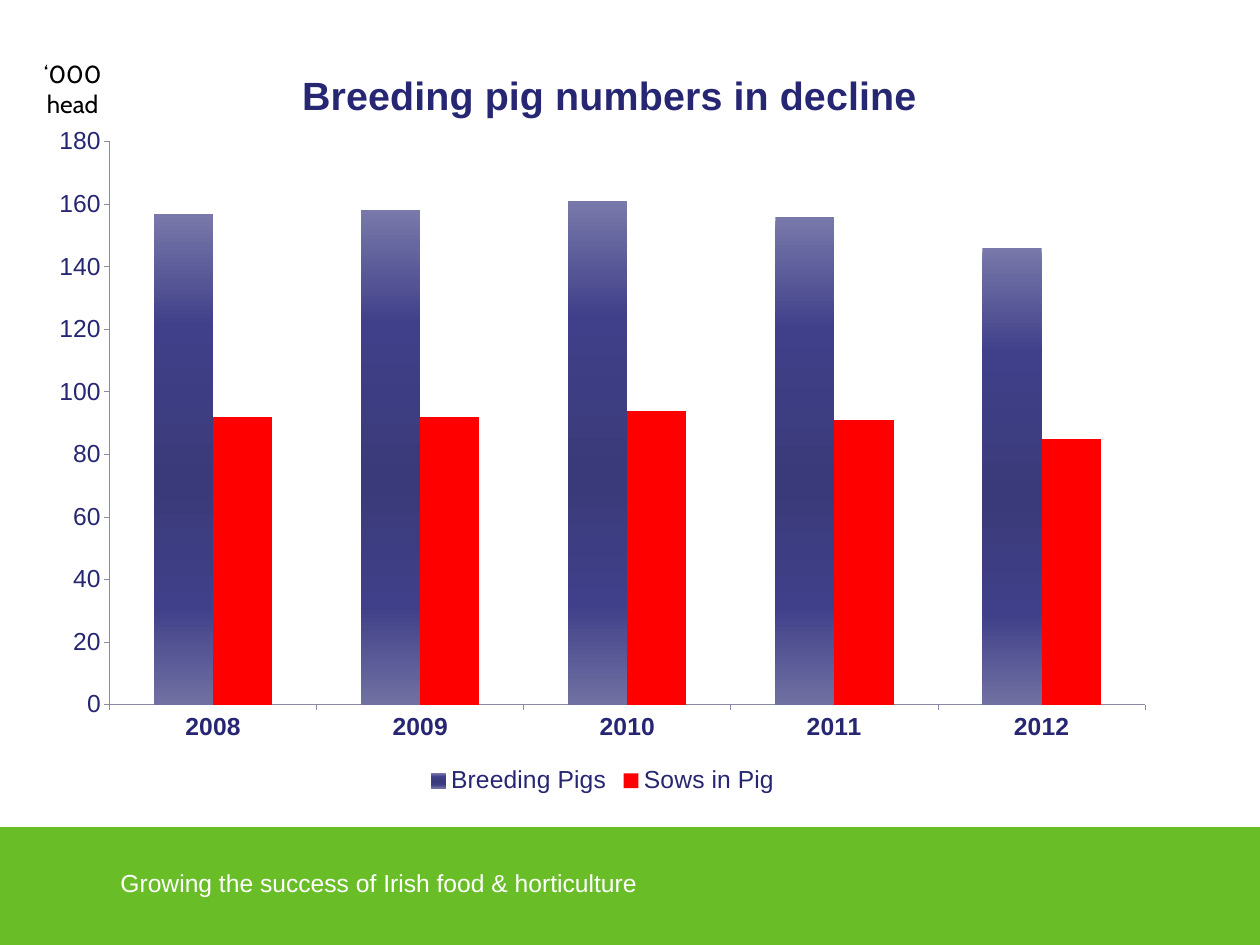
"""Build the breeding pig numbers slide."""
from lxml import etree
from pptx import Presentation, util as u
from pptx.chart.data import CategoryChartData
from pptx.dml.color import RGBColor
from pptx.enum import chart as ch, shapes, text
from pptx.oxml import parse_xml
from pptx.oxml.ns import nsdecls, qn

NAVY, RED, GREEN, WHITE, BLACK = "262672", "FF0000", "69BE28", "FFFFFF", "000000"
AXIS_GREY = "8A8AA5"
PIG_SHADES = [(0, "7878AA"), (23, "40408A"), (55, "3A3A7A"), (80, "40408A"), (100, "7070A2")]


def colour(hex_value):
    """Return the colour for a hex string."""
    return RGBColor.from_string(hex_value)


def apply(target, values):
    """Set each attribute named in values."""
    for name, value in values.items():
        setattr(target, name, value)


def style_font(font, size, hex_value, name="Arial", bold=False):
    """Give a font its face, size, weight and colour."""
    apply(font, {"name": name, "size": u.Pt(size), "bold": bold})
    font.color.rgb = colour(hex_value)


def add_band(slide, box, hex_value):
    """Add a plain filled rectangle."""
    band = slide.shapes.add_shape(shapes.MSO_SHAPE.RECTANGLE, *map(u.Inches, box))
    band.shadow.inherit = False
    band.fill.solid()
    band.fill.fore_color.rgb = colour(hex_value)
    band.line.fill.background()


def add_label(slide, box, wording, hex_value, font_name, align, inset):
    """Add a wrapped text box holding one paragraph."""
    frame = slide.shapes.add_textbox(*map(u.Inches, box)).text_frame
    apply(frame, {"word_wrap": True, "margin_left": u.Inches(inset),
                  "margin_right": u.Inches(inset), "margin_top": u.Inches(0.06),
                  "margin_bottom": u.Inches(0.06)})
    paragraph = frame.paragraphs[0]
    paragraph.alignment = align
    run = paragraph.add_run()
    run.text = wording
    style_font(run.font, 20, hex_value, font_name)


def place(part, index, x, y, w=None, h=None, inner=False):
    """Fix a chart part at fractions of the chart area."""
    for old in part.findall(qn("c:layout")):
        part.remove(old)
    layout = parse_xml(f"<c:layout {nsdecls('c')}><c:manualLayout/></c:layout>")
    settings = [("layoutTarget", "inner" if inner else None), ("xMode", "edge"),
                ("yMode", "edge"), ("x", x), ("y", y), ("w", w), ("h", h)]
    for tag, value in settings:
        if value is not None:
            etree.SubElement(layout[0], qn(f"c:{tag}")).set("val", str(value))
    part.insert(index, layout)


def shade(series, stops):
    """Fill a series with a vertical gradient."""
    series.format.fill.gradient()
    series.format.fill.gradient_angle = 270
    stop_list = series.format.fill.gradient_stops
    holder = series._element.spPr.find(qn("a:gradFill")).find(qn("a:gsLst"))
    assert len(stop_list) > 0
    for old in list(holder):
        holder.remove(old)
    for percent, hex_value in stops:
        stop = etree.SubElement(holder, qn("a:gs"), pos=str(percent * 1000))
        etree.SubElement(stop, qn("a:srgbClr"), val=hex_value)


def style_axis(axis, bold):
    """Give an axis its labels, ticks and line."""
    apply(axis, {"has_major_gridlines": False,
                 "major_tick_mark": ch.XL_TICK_MARK.OUTSIDE,
                 "minor_tick_mark": ch.XL_TICK_MARK.NONE})
    style_font(axis.tick_labels.font, 20, NAVY, bold=bold)
    axis.format.line.color.rgb = colour(AXIS_GREY)
    axis.format.line.width = u.Pt(0.75)


def add_pig_chart(slide):
    """Add the clustered columns of pigs and sows by year."""
    data = CategoryChartData(number_format="0")
    data.categories = ["2008", "2009", "2010", "2011", "2012"]
    data.add_series("Breeding Pigs", (157, 158, 161, 156, 146))
    data.add_series("Sows in Pig", (92, 92, 94, 91, 85))
    box = map(u.Inches, (0.42, 0.45, 12.76, 8.58))
    chart = slide.shapes.add_chart(ch.XL_CHART_TYPE.COLUMN_CLUSTERED, *box, data).chart
    style_font(chart.font, 10, NAVY)

    apply(chart, {"has_title": True, "has_legend": True})
    heading = chart.chart_title.text_frame.paragraphs[0].add_run()
    heading.text = "Breeding pig numbers in decline"
    style_font(heading.font, 32, NAVY, bold=True)
    apply(chart.legend, {"position": ch.XL_LEGEND_POSITION.BOTTOM, "include_in_layout": False})
    style_font(chart.legend.font, 20, NAVY)

    style_axis(chart.category_axis, True)
    style_axis(chart.value_axis, False)
    apply(chart.value_axis, {"minimum_scale": 0, "maximum_scale": 180, "major_unit": 20})

    columns = chart.plots[0]
    apply(columns, {"gap_width": 150, "overlap": 0, "vary_by_categories": False})
    pigs, sows = columns.series
    shade(pigs, PIG_SHADES)
    sows.format.fill.solid()
    sows.format.fill.fore_color.rgb = colour(RED)

    plot_area = chart._chartSpace.chart.plotArea
    place(plot_area, 0, 0.064, 0.134, 0.916, 0.741, inner=True)
    place(chart.chart_title._element, 1, 0.228, 0.03)
    place(chart.legend._element, 1, 0.34, 0.95, 0.32, 0.05)


def main():
    """Build and save the slide."""
    deck = Presentation()
    apply(deck, {"slide_width": u.Inches(14.22), "slide_height": u.Inches(10.67)})
    slide = deck.slides.add_slide(deck.slide_layouts[6])
    add_band(slide, (0, 9.34, 14.22, 1.33), GREEN)
    add_label(slide, (1.3, 9.74, 7.94, 0.46), "Growing the success of Irish food & horticulture",
              WHITE, "Arial", text.PP_ALIGN.LEFT, 0.06)
    add_pig_chart(slide)
    add_label(slide, (0.4, 0.61, 0.84, 0.8), "‘000 head", BLACK, "Cabin",
              text.PP_ALIGN.CENTER, 0.05)
    deck.save("out.pptx")


if __name__ == "__main__":
    main()
